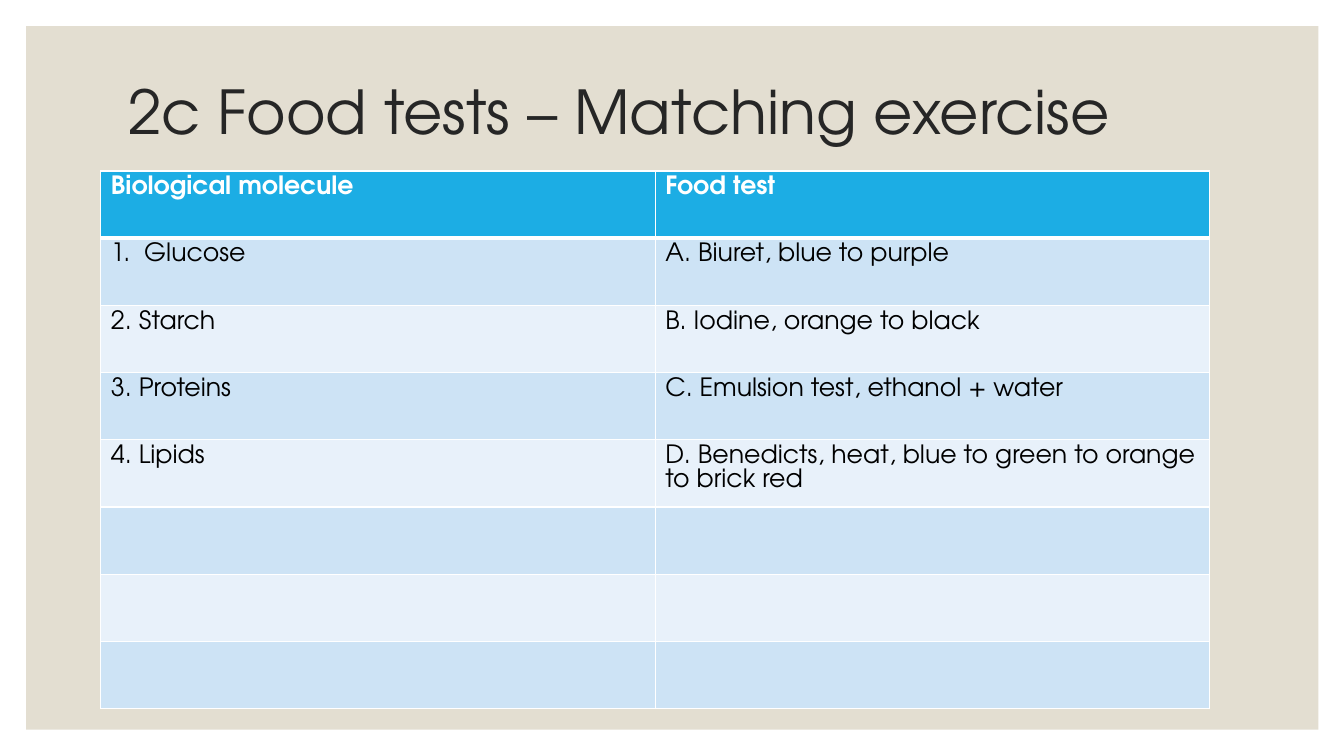
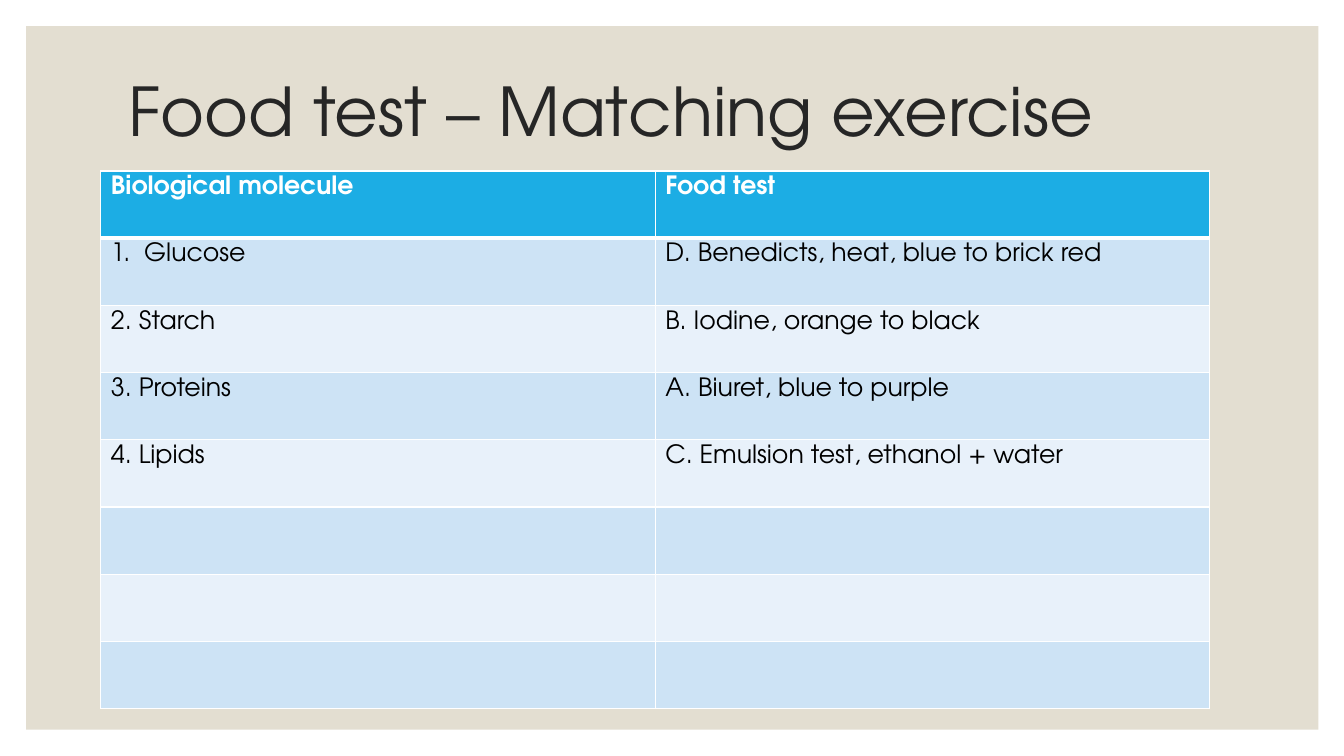
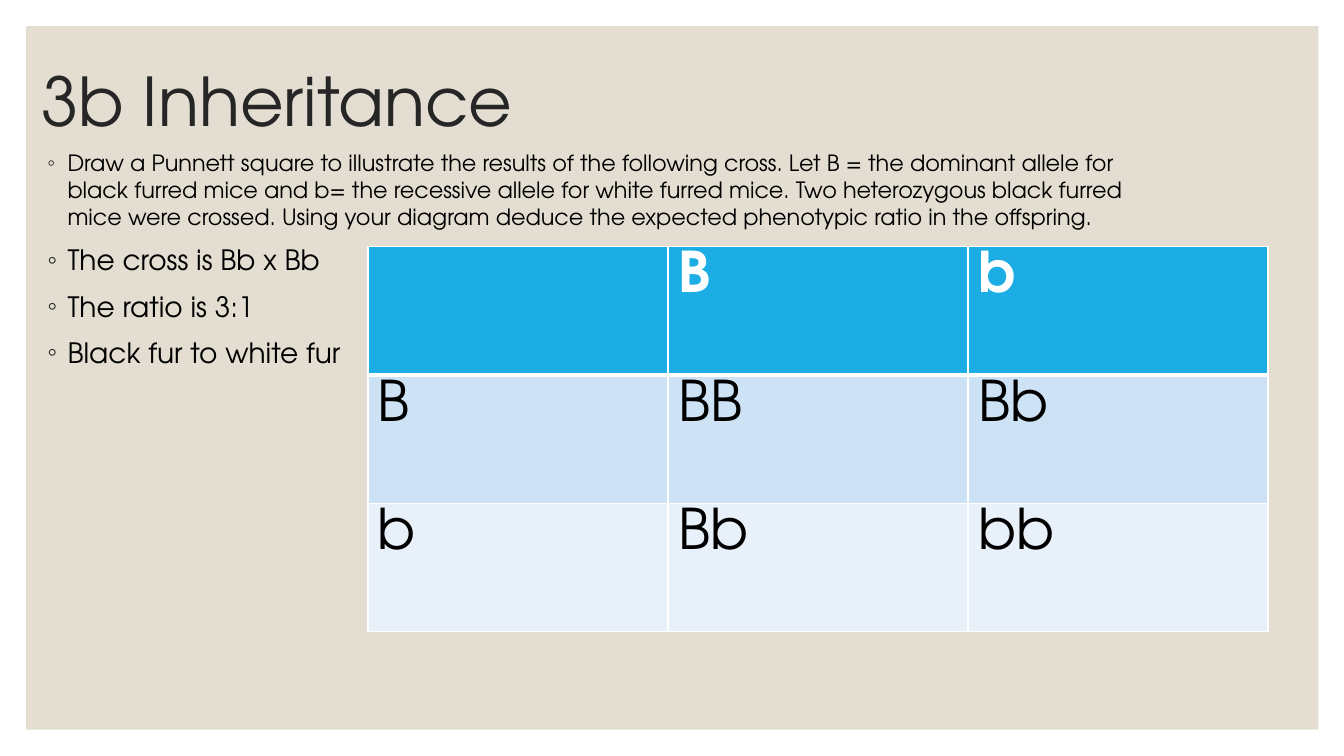
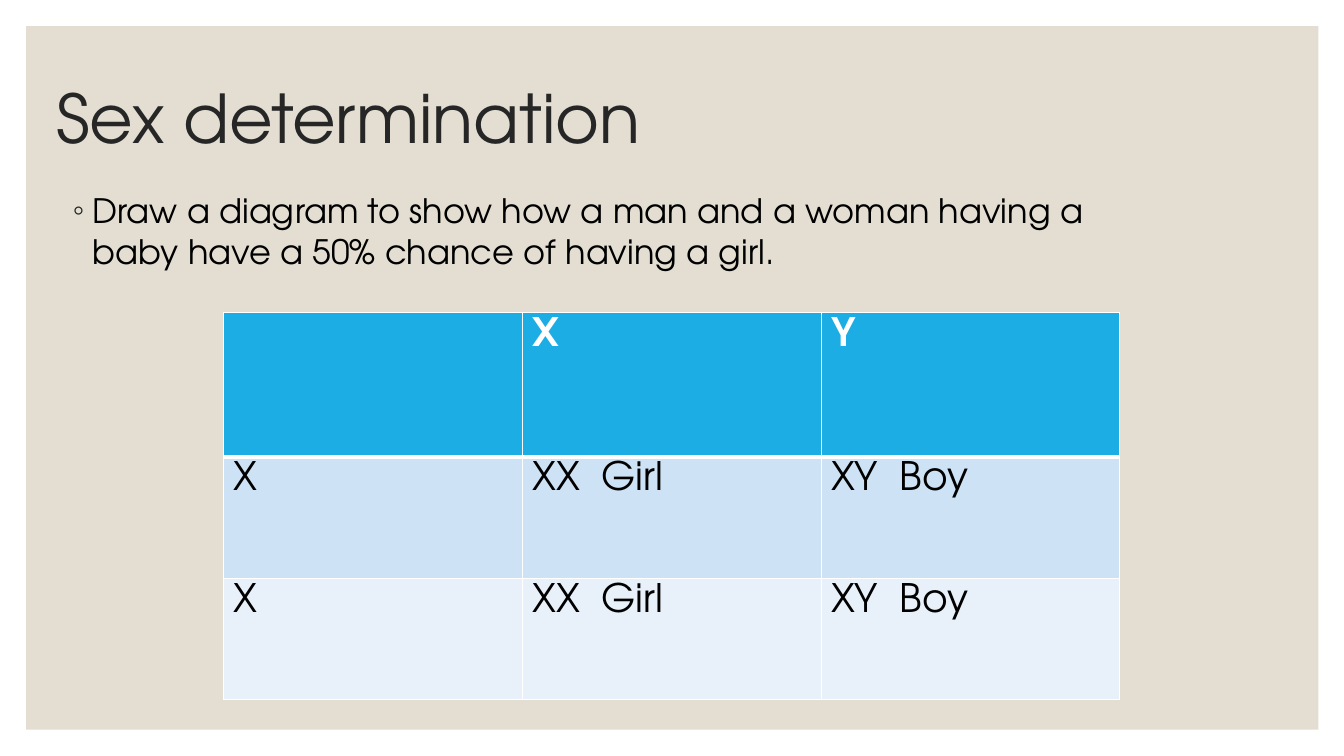
from lxml import etree
from pptx import Presentation
from pptx.dml.color import RGBColor
from pptx.enum.shapes import MSO_SHAPE
from pptx.enum.text import MSO_ANCHOR, PP_ALIGN
from pptx.oxml.ns import qn
from pptx.util import Emu, Pt

RECTANGLE = MSO_SHAPE.RECTANGLE
LEFT = PP_ALIGN.LEFT
MIDDLE = MSO_ANCHOR.MIDDLE

EMU_PER_PX = 3048
FONT = "TeX Gyre Adventor"
TITLE_LAYOUT, CONTENT_LAYOUT = 5, 1
COLORS = {
    "white": "FFFFFF",
    "panel": "E3DED1",
    "title": "262626",
    "text": "000000",
    "header": "1CADE4",
    "odd": "CDE3F5",
    "even": "E8F1FA",
}
PANEL_BOX = (78, 78, 3846, 2094)
MATCHING_TITLE_BOX = (351, 210, 3123, 264)
MOLECULES = ["1.  Glucose", "2. Starch", "3. Proteins", "4. Lipids"]
EMPTY_ROWS = 3


def px(length):
    """Turn a length in px into EMU."""
    return Emu(length * EMU_PER_PX)


def color(name):
    """Look up a palette colour."""
    return RGBColor.from_string(COLORS[name])


def place(shape, box):
    """Move and size a shape to a px box."""
    shape.left, shape.top, shape.width, shape.height = map(px, box)


def format_runs(paragraph, size, color_name, bold=False):
    """Set the font of every run in a paragraph."""
    for run in paragraph.runs:
        run.font.name = FONT
        run.font.size = Pt(size)
        run.font.bold = bold
        run.font.color.rgb = color(color_name)


def add_panel(slide):
    """Put the framed backdrop behind everything on a slide."""
    panel = slide.shapes.add_shape(RECTANGLE, *map(px, PANEL_BOX))
    panel.shadow.inherit = False
    panel.fill.solid()
    panel.fill.fore_color.rgb = color("panel")
    panel.line.fill.background()
    slide.shapes.element.insert(2, panel.element)


def add_slide(presentation, layout, title, box, size=48):
    """Add a slide with the backdrop and a formatted title."""
    slide = presentation.slides.add_slide(presentation.slide_layouts[layout])
    add_panel(slide)
    shape = slide.shapes.title
    place(shape, box)
    frame = shape.text_frame
    frame.text = title
    frame.vertical_anchor = MIDDLE
    paragraph = frame.paragraphs[0]
    paragraph.alignment = LEFT
    paragraph.line_spacing = 0.9
    format_runs(paragraph, size, "title")
    return slide


def add_bullet(paragraph):
    """Give a paragraph a hanging ring bullet."""
    properties = paragraph._p.get_or_add_pPr()
    indent = px(60)
    properties.set("marL", str(indent))
    properties.set("indent", str(-indent))
    bullet_color = etree.SubElement(properties, qn("a:buClr"))
    etree.SubElement(bullet_color, qn("a:srgbClr"), val=COLORS["title"])
    etree.SubElement(properties, qn("a:buChar"), char="◦")


def fill_body(slide, box, items):
    """Fill the body placeholder with (text, size) bullets."""
    body = slide.placeholders[1]
    place(body, box)
    frame = body.text_frame
    frame.text = "\n".join(text for text, size in items)
    for paragraph, (text, size) in zip(frame.paragraphs, items):
        paragraph.alignment = LEFT
        paragraph.line_spacing = 1.0
        paragraph.space_before = Pt(9)
        add_bullet(paragraph)
        format_runs(paragraph, size, "text")


def set_borders(cell, row_index):
    """Draw white cell borders, heavier under the header row."""
    widths = {
        "a:lnL": 1,
        "a:lnR": 1,
        "a:lnT": 3 if row_index == 1 else 1,
        "a:lnB": 3 if row_index == 0 else 1,
    }
    properties = cell._tc.get_or_add_tcPr()
    for tag, width in widths.items():
        line = etree.SubElement(properties, qn(tag), w=str(Pt(width)))
        fill = etree.SubElement(line, qn("a:solidFill"))
        etree.SubElement(fill, qn("a:srgbClr"), val=COLORS["white"])


def format_cell(cell, row_index, text, size):
    """Write and style one table cell according to its row."""
    is_header = row_index == 0
    band = "header" if is_header else "odd" if row_index % 2 else "even"
    set_borders(cell, row_index)
    cell.fill.solid()
    cell.fill.fore_color.rgb = color(band)
    if text:
        cell.text_frame.text = text
        format_runs(cell.text_frame.paragraphs[0], size,
                    "white" if is_header else "text", is_header)


def add_grid(slide, position, column_width, header_height, row_height, rows, size):
    """Add a banded table with equal columns and equal body rows."""
    columns = len(rows[0])
    height = header_height + row_height * (len(rows) - 1)
    table = slide.shapes.add_table(
        len(rows), columns, *map(px, (*position, column_width * columns, height))).table
    for column in table.columns:
        column.width = px(column_width)
    for row_index, texts in enumerate(rows):
        table.rows[row_index].height = px(row_height if row_index else header_height)
        for column_index, text in enumerate(texts):
            format_cell(table.cell(row_index, column_index), row_index, text, size)


def add_matching_slide(presentation, title, title_size, tests):
    """Add a slide that lists molecules beside food tests."""
    slide = add_slide(presentation, TITLE_LAYOUT, title, MATCHING_TITLE_BOX, title_size)
    rows = [("Biological molecule", "Food test"), *zip(MOLECULES, tests)]
    rows += [("", "")] * EMPTY_ROWS
    add_grid(slide, (300, 509), 1650, 200, 200, rows, 18)


def add_inheritance_slide(presentation):
    """Add the mouse fur cross with its Punnett square."""
    slide = add_slide(presentation, CONTENT_LAYOUT, "3b Inheritance", (93, 87, 3300, 450))
    fill_body(slide, (111, 430, 3300, 1290), [
        ("Draw a Punnett square to illustrate the results of the following cross. "
         "Let B = the dominant allele for black furred mice and b= the recessive "
         "allele for white furred mice. Two heterozygous black furred mice were "
         "crossed. Using your diagram deduce the expected phenotypic ratio in the "
         "offspring.", 16),
        ("The cross is Bb x Bb", 20),
        ("The ratio is 3:1", 20),
        ("Black fur to white fur", 20),
    ])
    rows = [("", "B", "b"), ("B", "BB", "Bb"), ("b", "Bb", "bb")]
    add_grid(slide, (1095, 733), 893, 384, 381, rows, 40)


def add_sex_slide(presentation):
    """Add the sex determination square."""
    slide = add_slide(presentation, CONTENT_LAYOUT, "Sex determination", (138, 138, 3300, 450))
    fill_body(slide, (186, 551, 3300, 1290), [
        ("Draw a diagram to show how a man and a woman having a baby have a 50% "
         "chance of having a girl.", 24),
    ])
    rows = [("", "X", "Y")] + [("X", "XX  Girl", "XY  Boy")] * 2
    add_grid(slide, (666, 930), 889, 430, 361, rows, 28)


def main():
    """Build and save the presentation."""
    presentation = Presentation()
    presentation.slide_width, presentation.slide_height = px(4000), px(2250)
    add_matching_slide(presentation, "2c Food tests – Matching exercise", 43.2, [
        "A. Biuret, blue to purple",
        "B. Iodine, orange to black",
        "C. Emulsion test, ethanol + water",
        "D. Benedicts, heat, blue to green to orange to brick red",
    ])
    add_matching_slide(presentation, "Food test – Matching exercise", 48, [
        "D. Benedicts, heat, blue to brick red",
        "B. Iodine, orange to black",
        "A. Biuret, blue to purple",
        "C. Emulsion test, ethanol + water",
    ])
    add_inheritance_slide(presentation)
    add_sex_slide(presentation)
    presentation.save("out.pptx")


if __name__ == "__main__":
    main()
